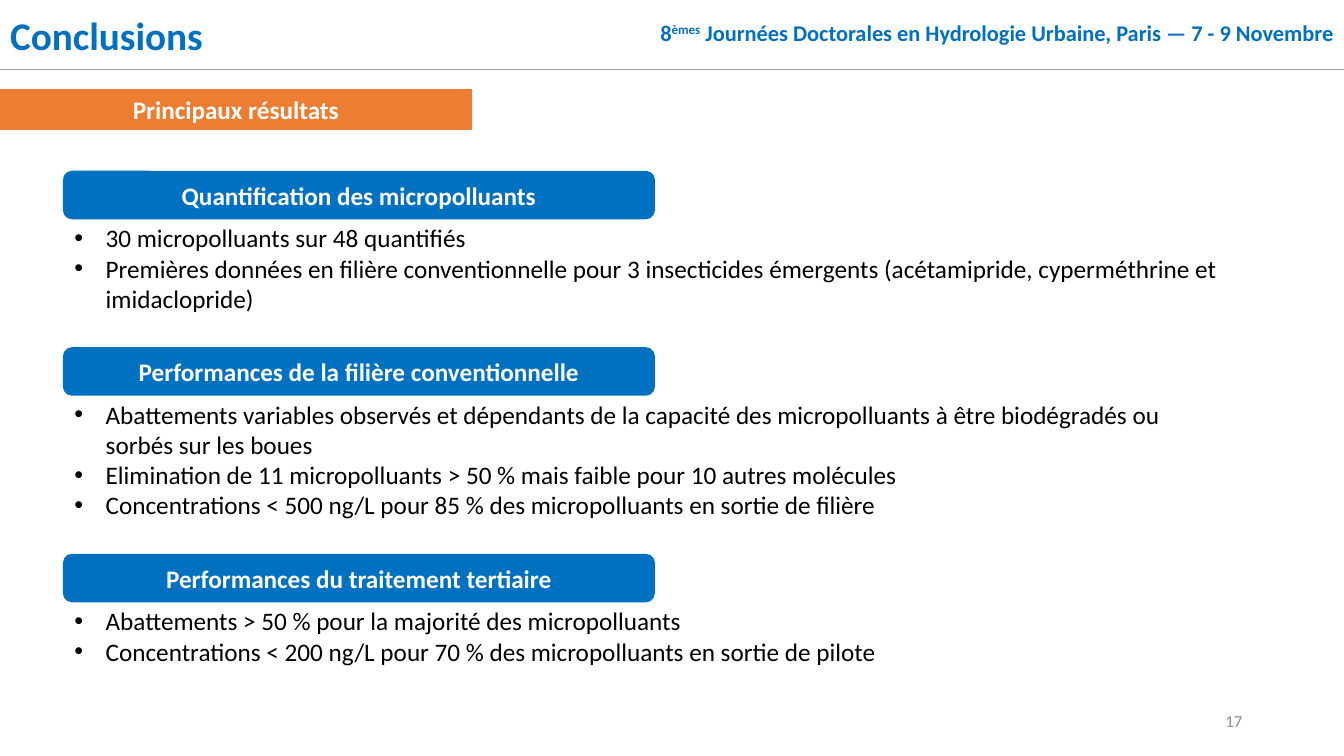
from lxml.etree import SubElement
from pptx import Presentation
from pptx.dml.color import RGBColor
from pptx.enum.shapes import MSO_CONNECTOR, MSO_SHAPE
from pptx.enum.text import MSO_ANCHOR, MSO_AUTO_SIZE, PP_ALIGN
from pptx.oxml.ns import qn
from pptx.util import Pt

PX = 9144  # EMU, 100 px to the inch
PAGE_WIDTH, PAGE_HEIGHT = 1333, 750
BLUE, ORANGE, WHITE, BLACK = "0070C0", "ED7D31", "FFFFFF", "000000"
LINE_GRAY, NUMBER_GRAY = "A6A6A6", "8C8C8C"
BAND_HEIGHT = 69
LABEL_HEIGHT, LINE_HEIGHT, BODY_PADDING, SECTION_GAP = 45, 30, 11, 29
INDENT = 31

# heading, number of text lines, bullets
SECTIONS = [
    ("Quantification des micropolluants", 3, [
        "30 micropolluants sur 48 quantifiés",
        "Premières données en filière conventionnelle pour 3 insecticides émergents "
        "(acétamipride, cyperméthrine et imidaclopride)",
    ]),
    ("Performances de la filière conventionnelle", 4, [
        "Abattements variables observés et dépendants de la capacité des micropolluants "
        "à être biodégradés ou sorbés sur les boues",
        "Elimination de 11 micropolluants > 50 % mais faible pour 10 autres molécules",
        "Concentrations < 500 ng/L pour 85 % des micropolluants en sortie de filière",
    ]),
    ("Performances du traitement tertiaire", 2, [
        "Abattements > 50 % pour la majorité des micropolluants",
        "Concentrations < 200 ng/L pour 70 % des micropolluants en sortie de pilote",
    ]),
]


def color(hex_string):
    return RGBColor.from_string(hex_string)


def scaled(*lengths):
    return [length * PX for length in lengths]


def style(para, size, hex_string, bold=False, align=PP_ALIGN.LEFT):
    para.alignment = align
    for span in para.runs:
        span.font.name = "Calibri"
        span.font.size = Pt(size)
        span.font.bold = bold
        span.font.color.rgb = color(hex_string)


def add_text_box(page, box, anchor=MSO_ANCHOR.TOP):
    frame = page.shapes.add_textbox(*scaled(*box)).text_frame
    frame.word_wrap = True
    frame.vertical_anchor = anchor
    return frame


def add_label(page, box, preset, text, fill, line_width):
    label = page.shapes.add_shape(preset, *scaled(*box))
    label.shadow.inherit = False
    label.fill.solid()
    label.fill.fore_color.rgb = color(fill)
    label.line.color.rgb = color(fill)
    label.line.width = Pt(line_width)
    label.text_frame.text = text
    label.text_frame.vertical_anchor = MSO_ANCHOR.MIDDLE
    style(label.text_frame.paragraphs[0], 18, WHITE, True, PP_ALIGN.CENTER)


def add_bullets(page, box, items):
    frame = add_text_box(page, box)
    frame.text = "\n".join(items)
    for para in frame.paragraphs:
        properties = para._p.get_or_add_pPr()
        properties.set("marL", str(INDENT * PX))
        properties.set("indent", str(-INDENT * PX))
        SubElement(properties, qn("a:buFont")).set("typeface", "Arial")
        SubElement(properties, qn("a:buChar")).set("char", "•")
        style(para, 18, BLACK)


def add_header(page, width, height):
    """Title on the left, event on the right, rule underneath."""
    title = page.shapes.title
    title.left, title.top, title.width, title.height = scaled(0, 0, 457, height)
    title.text_frame.text = "Conclusions"
    title.text_frame.auto_size = MSO_AUTO_SIZE.NONE
    title.text_frame.vertical_anchor = MSO_ANCHOR.MIDDLE
    style(title.text_frame.paragraphs[0], 28, BLUE, True)

    event_left = 580
    frame = add_text_box(page, (event_left, -1, width - event_left, height), MSO_ANCHOR.MIDDLE)
    para = frame.paragraphs[0]
    para.line_spacing = 0.9
    for text in ("8", "èmes", " Journées Doctorales en Hydrologie Urbaine, Paris — 7 - 9 Novembre"):
        para.add_run().text = text
    style(para, 16, BLUE, True, PP_ALIGN.RIGHT)
    para.runs[1]._r.get_or_add_rPr().set("baseline", "30000")

    rule = page.shapes.add_connector(MSO_CONNECTOR.STRAIGHT, *scaled(0, height, width, height))
    rule.line.color.rgb = color(LINE_GRAY)
    rule.line.width = Pt(0.5)
    SubElement(rule._element.spPr, qn("a:effectLst"))


def add_sections(page, left, top, width):
    """Stack of headings, each followed by its bullets."""
    for heading, line_count, items in SECTIONS:
        add_label(page, (left, top, 584, LABEL_HEIGHT), MSO_SHAPE.ROUNDED_RECTANGLE,
                  heading, BLUE, 2.25)
        body_height = line_count * LINE_HEIGHT + BODY_PADDING
        add_bullets(page, (left, top + LABEL_HEIGHT, width, body_height), items)
        top += LABEL_HEIGHT + body_height + SECTION_GAP


def add_page_number(page, box, number):
    frame = add_text_box(page, box, MSO_ANCHOR.MIDDLE)
    frame.text = number
    style(frame.paragraphs[0], 12, NUMBER_GRAY, align=PP_ALIGN.RIGHT)


def main():
    deck = Presentation()
    deck.slide_width, deck.slide_height = scaled(PAGE_WIDTH, PAGE_HEIGHT)
    page = deck.slides.add_slide(deck.slide_layouts.get_by_name("Title Only"))
    add_header(page, PAGE_WIDTH, BAND_HEIGHT)
    add_label(page, (0, 89, 468, 40), MSO_SHAPE.RECTANGLE, "Principaux résultats", ORANGE, 0.75)
    add_sections(page, 64, 171, 1160)
    add_page_number(page, (942, 695, 300, 40), "17")
    deck.save("out.pptx")


if __name__ == "__main__":
    main()
